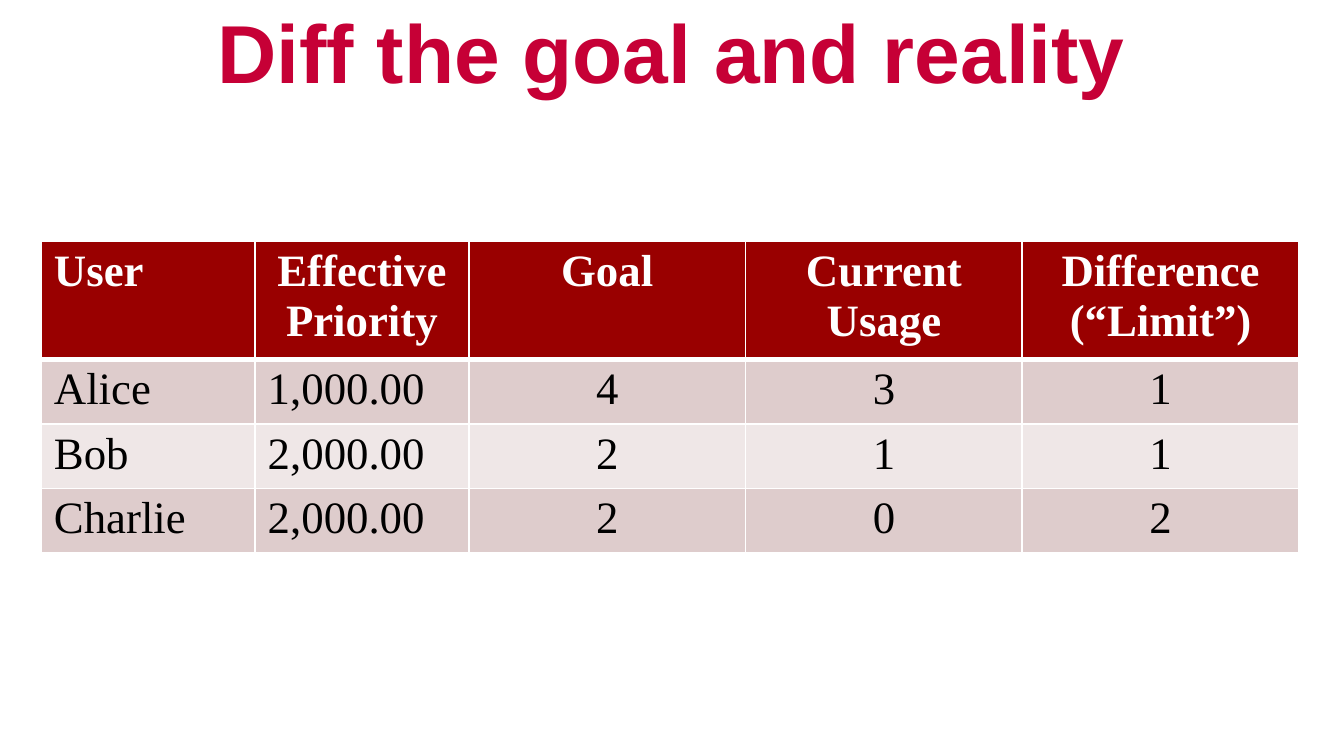
from typing import NamedTuple

from lxml import etree
from pptx import Presentation
from pptx.dml.color import RGBColor
from pptx.enum import text
from pptx.oxml import ns
from pptx.util import Cm, Pt

HUES = {"title": "C60036", "head": "990000", "odd": "DECCCC",
        "even": "EFE7E7", "white": "FFFFFF", "black": "000000"}
MID = text.PP_ALIGN.CENTER
LEFT = text.PP_ALIGN.LEFT


class Style(NamedTuple):
    font: str
    size: int
    hue: str
    bold: bool


class Row(NamedTuple):
    cells: tuple[str, ...]
    fill: str
    style: Style
    aligns: tuple
    height: float
    base: int


def rgb(name: str) -> RGBColor:
    return RGBColor.from_string(HUES[name])


def write(frame, words: str, style: Style, align) -> None:
    for i, line in enumerate(words.split("\n")):
        para = frame.add_paragraph() if i else frame.paragraphs[0]
        para.alignment = align
        run = para.add_run()
        run.text = line
        run.font.name = style.font
        run.font.size = Pt(style.size)
        run.font.bold = style.bold
        run.font.color.rgb = rgb(style.hue)


def edge(cell, widths: dict[str, int]) -> None:
    props = cell._tc.get_or_add_tcPr()
    for i, (side, width) in enumerate(widths.items()):
        line = etree.Element(ns.qn(f"a:ln{side}"), w=str(Pt(width)))
        fill = etree.SubElement(line, ns.qn("a:solidFill"))
        etree.SubElement(fill, ns.qn("a:srgbClr"), val=HUES["white"])
        props.insert(i, line)


def draw(grid, index: int, row: Row) -> None:
    grid.rows[index].height = Cm(row.height)
    for j, (words, align) in enumerate(zip(row.cells, row.aligns)):
        cell = grid.cell(index, j)
        cell.margin_left = cell.margin_right = Cm(0.24)
        cell.margin_top = cell.margin_bottom = Cm(0.1)
        cell.fill.solid()
        cell.fill.fore_color.rgb = rgb(row.fill)
        top = 3 if index == 1 else 1
        edge(cell, {"L": 1, "R": 1, "T": top, "B": row.base})
        write(cell.text_frame, words, row.style, align)


def main() -> None:
    deck = Presentation()
    deck.slide_width, deck.slide_height = Cm(25.4), Cm(14.28)
    slide = deck.slides.add_slide(deck.slide_layouts[6])

    title = slide.shapes.add_textbox(0, 0, Cm(25.4), Cm(1.9)).text_frame
    title.word_wrap = True
    title.vertical_anchor = text.MSO_ANCHOR.MIDDLE
    write(title, "Diff the goal and reality",
          Style("Arial", 44, "title", True), MID)

    head = Style("Times New Roman", 24, "white", True)
    body = head._replace(hue="black", bold=False)
    users = (
        ("Alice", "1,000.00", "4", "3", "1"),
        ("Bob", "2,000.00", "2", "1", "1"),
        ("Charlie", "2,000.00", "2", "0", "2"),
    )
    labels = ("User", "Effective\nPriority", "Goal",
              "Current\nUsage", "Difference\n(“Limit”)")
    rows = [Row(labels, "head", head, (LEFT,) + (MID,) * 4, 2.1, 3)]
    rows += [Row(user, "even" if i % 2 else "odd", body,
                 (LEFT,) * 2 + (MID,) * 3, 1.19, 1)
             for i, user in enumerate(users)]
    widths = (4.04,) * 2 + (5.23,) * 3

    grid = slide.shapes.add_table(
        len(rows), len(widths), Cm(0.78), Cm(4.56),
        Cm(sum(widths)), Cm(sum(row.height for row in rows))).table
    for col, width in zip(grid.columns, widths):
        col.width = Cm(width)
    for i, row in enumerate(rows):
        draw(grid, i, row)

    deck.save("out.pptx")


if __name__ == "__main__":
    main()
